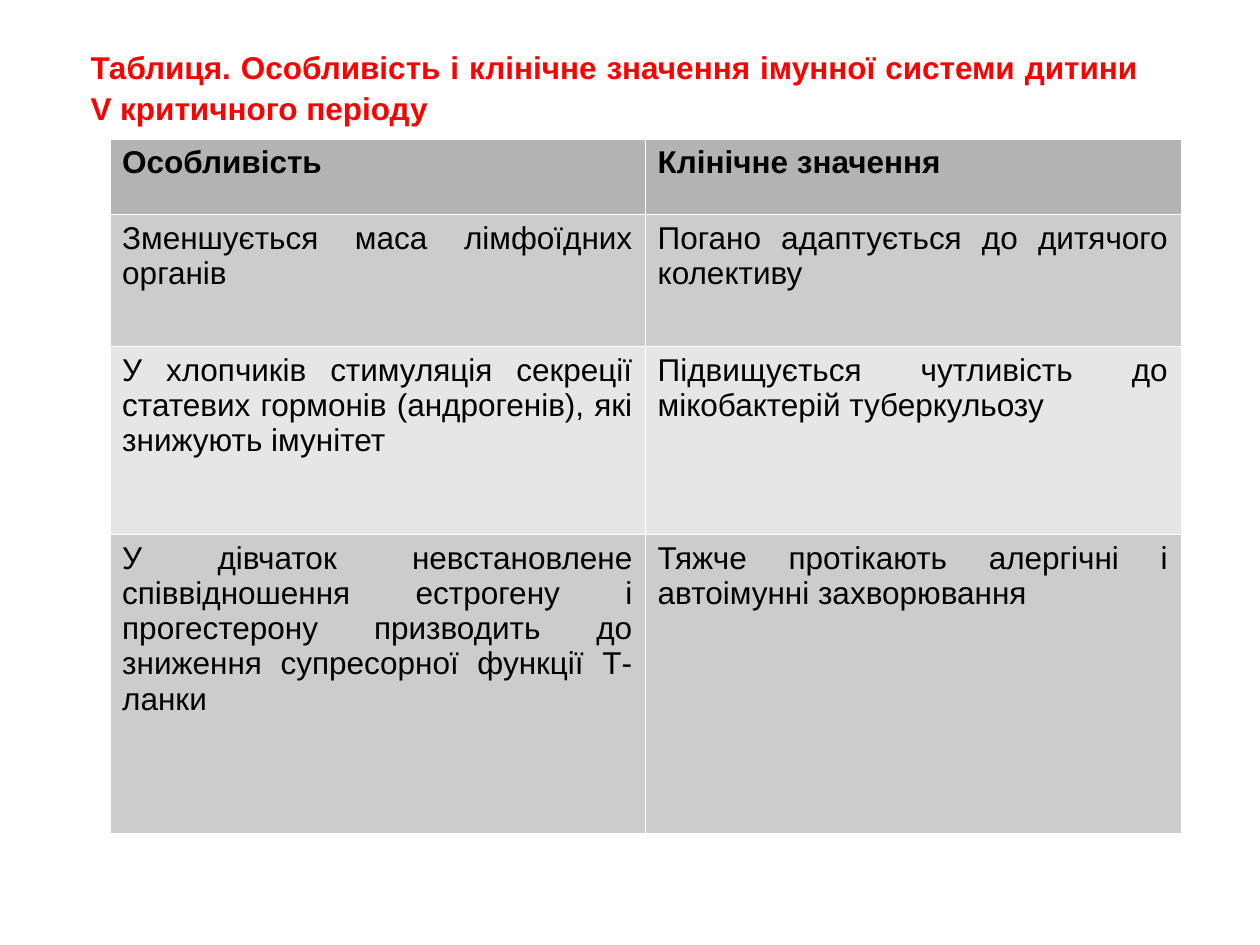
"""Builds a slide with a titled table on the immune system of a child."""
from dataclasses import dataclass

from lxml import etree
from pptx import Presentation, util as u
from pptx.dml.color import RGBColor
from pptx.enum import text
from pptx.oxml.ns import qn


@dataclass(frozen=True)
class Theme:
    face: str = "Arial"
    size: u.Pt = u.Pt(18)
    ink: str = "000000"
    title: str = "FF0000"
    head: str = "B3B3B3"
    odd: str = "CCCCCC"
    even: str = "E6E6E6"
    rule: str = "FFFFFF"
    width: u.Pt = u.Pt(0.06)


@dataclass(frozen=True)
class Row:
    high: float
    trait: str
    sense: str


LOOK = Theme()
TITLE = (
    "Таблиця. Особливість і клінічне значення імунної системи дитини ",
    "V критичного періоду",
)
ROWS = (
    Row(0.6, "Особливість", "Клінічне значення "),
    Row(1.05, "Зменшується маса лімфоїдних органів ",
        "Погано адаптується до дитячого колективу "),
    Row(1.49, "У хлопчиків стимуляція секреції статевих гормонів (андрогенів), "
        "які знижують імунітет",
        "Підвищується чутливість до мікобактерій туберкульозу "),
    Row(2.37, "У дівчаток невстановлене співвідношення естрогену і прогестерону "
        "призводить до зниження супресорної функції Т-ланки ",
        "Тяжче протікають алергічні і автоімунні захворювання "),
)


def style(para, color: str, bold: bool) -> None:
    """Set the alignment and font of a paragraph."""
    para.alignment = text.PP_ALIGN.JUSTIFY
    font = para.font
    font.name, font.size, font.bold = LOOK.face, LOOK.size, bold
    font.color.rgb = RGBColor.from_string(color)


def edge(cell) -> None:
    """Draw thin rules on all four sides of a cell."""
    props = cell._tc.get_or_add_tcPr()
    for spot, side in enumerate(("a:lnL", "a:lnR", "a:lnT", "a:lnB")):
        line = etree.Element(qn(side), w=str(int(LOOK.width)))
        fill = etree.SubElement(line, qn("a:solidFill"))
        etree.SubElement(fill, qn("a:srgbClr"), val=LOOK.rule)
        props.insert(spot, line)


def title(slide) -> None:
    """Add the two-line title."""
    box = slide.shapes.add_textbox(
        u.Inches(0.62), u.Inches(0.31), u.Inches(8.51), u.Inches(0.7))
    frame = box.text_frame
    frame.word_wrap = True
    frame.auto_size = text.MSO_AUTO_SIZE.SHAPE_TO_FIT_TEXT
    frame.text = "\n".join(TITLE)
    for para in frame.paragraphs:
        style(para, LOOK.title, True)
        para.line_spacing = 1.08


def table(slide) -> None:
    """Add the table with its header and shaded rows."""
    high = sum(row.high for row in ROWS)
    grid = slide.shapes.add_table(
        len(ROWS), 2, u.Inches(0.87), u.Inches(1.1),
        u.Inches(8.5), u.Inches(high)).table
    for num, row in enumerate(ROWS):
        grid.rows[num].height = u.Inches(row.high)
        shade = LOOK.head if num == 0 else (LOOK.odd if num % 2 else LOOK.even)
        for cell, words in zip(grid.rows[num].cells, (row.trait, row.sense)):
            cell.text = words
            style(cell.text_frame.paragraphs[0], LOOK.ink, num == 0)
            cell.fill.solid()
            cell.fill.fore_color.rgb = RGBColor.from_string(shade)
            edge(cell)


def main() -> None:
    """Build and save the slide."""
    deck = Presentation()
    deck.slide_width, deck.slide_height = u.Inches(10), u.Inches(7.5)
    slide = deck.slides.add_slide(deck.slide_layouts[6])
    title(slide)
    table(slide)
    deck.save("out.pptx")


if __name__ == "__main__":
    main()
